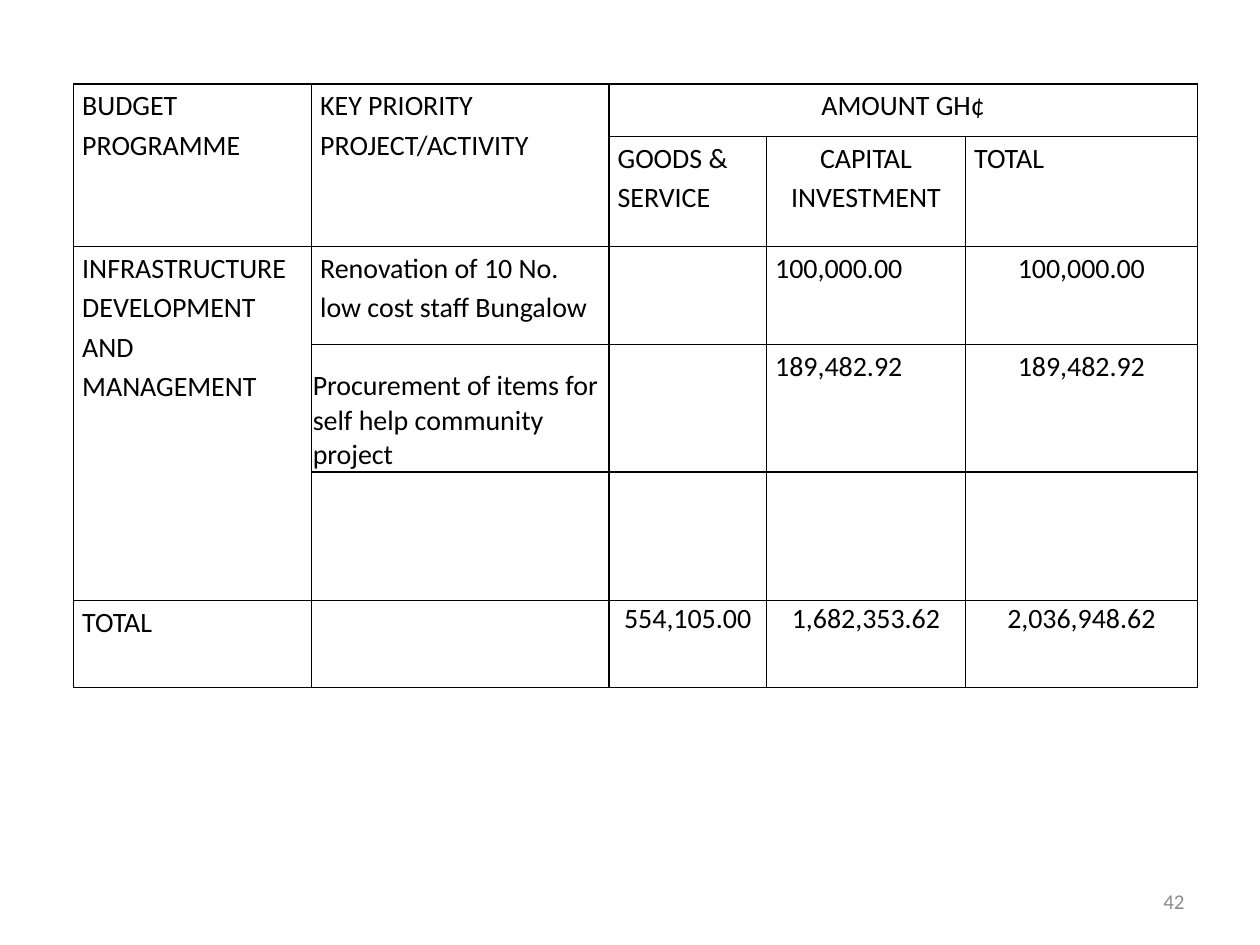
from lxml.etree import SubElement
from pptx import Presentation
from pptx.dml.color import RGBColor
from pptx.enum.text import MSO_ANCHOR, PP_ALIGN
from pptx.oxml.ns import qn
from pptx.util import Pt

LEFT, CENTER, RIGHT = PP_ALIGN.LEFT, PP_ALIGN.CENTER, PP_ALIGN.RIGHT
BODY = (5, 0, 5, 0)
TIGHT = (0.75, 0.75, 0.75, 0)

COLUMNS = [136, 170, 90, 113.75, 132.5]
ROWS = [30, 63, 56, 72.75, 73.5, 49.75]
MERGES = [(0, 0, 1, 0), (0, 1, 1, 1), (0, 2, 0, 4), (2, 0, 4, 0)]

CENTERED = {"align": CENTER}
TOTALS = {"align": CENTER, "spacing": 1.0, "margins": TIGHT}
ITEM = {"spacing": 1.0, "margins": TIGHT, "anchor": MSO_ANCHOR.BOTTOM}
CELLS = {
    (0, 0): ("BUDGET PROGRAMME", {}),
    (0, 1): ("KEY PRIORITY PROJECT/ACTIVITY", {}),
    (0, 2): ("AMOUNT GH¢", CENTERED),
    (1, 2): ("GOODS & SERVICE", {}),
    (1, 3): ("CAPITAL INVESTMENT", CENTERED),
    (1, 4): ("TOTAL", {}),
    (2, 0): ("INFRASTRUCTURE DEVELOPMENT AND MANAGEMENT", {}),
    (2, 1): ("Renovation of 10 No. low cost staff Bungalow", {}),
    (2, 3): ("100,000.00", {}),
    (2, 4): ("100,000.00", CENTERED),
    (3, 1): ("Procurement of items for self help community project", ITEM),
    (3, 3): ("189,482.92", {}),
    (3, 4): ("189,482.92", CENTERED),
    (5, 0): ("TOTAL", {}),
    (5, 2): ("554,105.00", TOTALS),
    (5, 3): ("1,682,353.62", TOTALS),
    (5, 4): ("2,036,948.62", TOTALS),
}


def color(hex_string):
    return RGBColor.from_string(hex_string)


def write(tf, text, font="Calibri", size=16, fill="000000", align=LEFT, spacing=1.0):
    p = tf.paragraphs[0]
    p.alignment = align
    p.line_spacing = spacing
    r = p.add_run()
    r.text = text
    r.font.name = font
    r.font.size = Pt(size)
    r.font.color.rgb = color(fill)


class SlideBuilder:
    ink = "000000"
    muted = "8C8C8C"
    border = 1

    def __init__(self, slide):
        self.s = slide

    def outline(self, cell):
        tc_pr = cell._tc.get_or_add_tcPr()
        for side in ("a:lnL", "a:lnR", "a:lnT", "a:lnB"):
            ln = SubElement(tc_pr, qn(side), w=str(Pt(self.border)))
            solid = SubElement(ln, qn("a:solidFill"))
            SubElement(solid, qn("a:srgbClr"), val=self.ink)

    def fill_cell(self, cell, text, align=LEFT, spacing=1.15, margins=BODY,
                  anchor=MSO_ANCHOR.TOP):
        (cell.margin_left, cell.margin_top,
         cell.margin_right, cell.margin_bottom) = map(Pt, margins)
        cell.vertical_anchor = anchor
        write(cell.text_frame, text, fill=self.ink, align=align, spacing=spacing)

    def table(self, left, top, columns, rows, merges, cells):
        frame = self.s.shapes.add_table(
            len(rows), len(columns), Pt(left), Pt(top), Pt(sum(columns)), Pt(sum(rows)))
        table = frame.table
        table.first_row = table.horz_banding = False
        for column, width in zip(table.columns, columns):
            column.width = Pt(width)
        for row, height in zip(table.rows, rows):
            row.height = Pt(height)
        for top_row, first, bottom_row, last in merges:
            table.cell(top_row, first).merge(table.cell(bottom_row, last))
        for cell in (c for row in table.rows for c in row.cells):
            self.outline(cell)
            cell.fill.background()
        for position, (text, style) in cells.items():
            self.fill_cell(table.cell(*position), text, **style)

    def page_number(self, text, left, top, width, height):
        sp = self.s.shapes.add_textbox(Pt(left), Pt(top), Pt(width), Pt(height))
        tf = sp.text_frame
        tf.word_wrap = True
        tf.vertical_anchor = MSO_ANCHOR.MIDDLE
        write(tf, text, size=12, fill=self.muted, align=RIGHT)


def main():
    prs = Presentation()
    prs.slide_width, prs.slide_height = Pt(720), Pt(540)
    builder = SlideBuilder(prs.slides.add_slide(prs.slide_layouts[6]))
    builder.table(42, 48, COLUMNS, ROWS, MERGES, CELLS)
    builder.page_number("42", 516, 500.5, 168, 28.75)
    prs.save("out.pptx")


if __name__ == "__main__":
    main()
